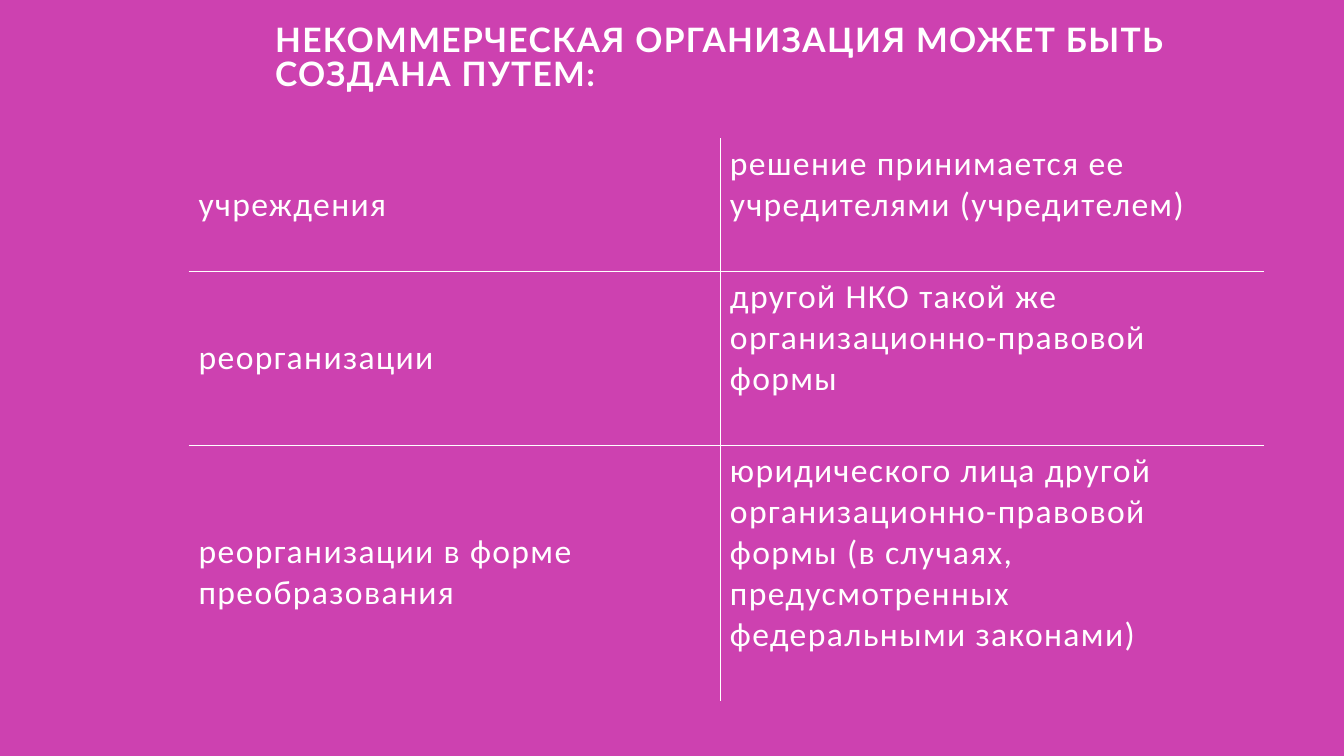
from lxml.etree import SubElement
from pptx import Presentation
from pptx.dml.color import RGBColor
from pptx.enum.text import MSO_ANCHOR
from pptx.oxml.ns import qn
from pptx.util import Inches, Pt

BACKGROUND = "CD41B0"
WHITE = "FFFFFF"
NO_GRID_STYLE = "{2D5ABB26-0587-4C30-8999-92F81FD0307C}"
TITLE = "НЕКОММЕРЧЕСКАЯ ОРГАНИЗАЦИЯ МОЖЕТ БЫТЬ СОЗДАНА ПУТЕМ:"
WAYS = [
    ("учреждения", "решение принимается ее учредителями (учредителем)"),
    ("реорганизации", "другой НКО такой же организационно-правовой формы"),
    ("реорганизации в форме преобразования",
     "юридического лица другой организационно-правовой формы "
     "(в случаях, предусмотренных федеральными законами)"),
]
COLUMN_WIDTHS = [5.27, 5.4]
ROW_HEIGHTS = [1.32, 1.73, 2.53]


def color(value):
    return RGBColor.from_string(value)


def add_run(paragraph, text, font, bold=False):
    """Add white 24 pt text with letters spaced by one point."""
    run = paragraph.add_run()
    run.text = text
    run.font.name = font
    run.font.size = Pt(24)
    run.font.bold = bold
    run.font.color.rgb = color(WHITE)
    run._r.get_or_add_rPr().set("spc", "100")


def add_border(cell, side):
    """Draw a thin white border on side L, R, T or B of a cell."""
    line = SubElement(cell._tc.get_or_add_tcPr(), qn(f"a:ln{side}"), w=str(Pt(0.5)))
    fill = SubElement(line, qn("a:solidFill"))
    SubElement(fill, qn("a:srgbClr"), val=WHITE)


def add_title(slide, left, top, width, height):
    shape = slide.shapes.add_textbox(Inches(left), Inches(top), Inches(width), Inches(height))
    shape.text_frame.word_wrap = True
    paragraph = shape.text_frame.paragraphs[0]
    paragraph.line_spacing = 0.85
    add_run(paragraph, TITLE, "Lato", bold=True)


def add_ways_table(slide, left, top):
    """Add the table of ways, ruled only between its cells."""
    row_count, column_count = len(ROW_HEIGHTS), len(COLUMN_WIDTHS)
    shape = slide.shapes.add_table(
        row_count, column_count, Inches(left), Inches(top),
        Inches(sum(COLUMN_WIDTHS)), Inches(sum(ROW_HEIGHTS)))
    table = shape.table
    table.first_row = table.horz_banding = False
    table._tbl.tblPr.find(qn("a:tableStyleId")).text = NO_GRID_STYLE
    for column, width in zip(table.columns, COLUMN_WIDTHS):
        column.width = Inches(width)
    for row, height in zip(table.rows, ROW_HEIGHTS):
        row.height = Inches(height)
    for row_index, texts in enumerate(WAYS):
        for column_index, text in enumerate(texts):
            cell = table.cell(row_index, column_index)
            cell.vertical_anchor = MSO_ANCHOR.TOP if column_index else MSO_ANCHOR.MIDDLE
            add_run(cell.text_frame.paragraphs[0], text, "Calibri")
            inner_sides = {
                "L": column_index > 0,
                "R": column_index < column_count - 1,
                "T": row_index > 0,
                "B": row_index < row_count - 1,
            }
            for side, is_inner in inner_sides.items():
                if is_inner:
                    add_border(cell, side)
            cell.fill.background()


def main():
    presentation = Presentation()
    presentation.slide_width = Inches(13.33)
    presentation.slide_height = Inches(7.5)
    slide = presentation.slides.add_slide(presentation.slide_layouts[6])
    slide.background.fill.solid()
    slide.background.fill.fore_color.rgb = color(BACKGROUND)
    add_title(slide, 2.63, 0.2, 9.14, 0.75)
    add_ways_table(slide, 1.87, 1.37)
    presentation.save("out.pptx")


if __name__ == "__main__":
    main()
